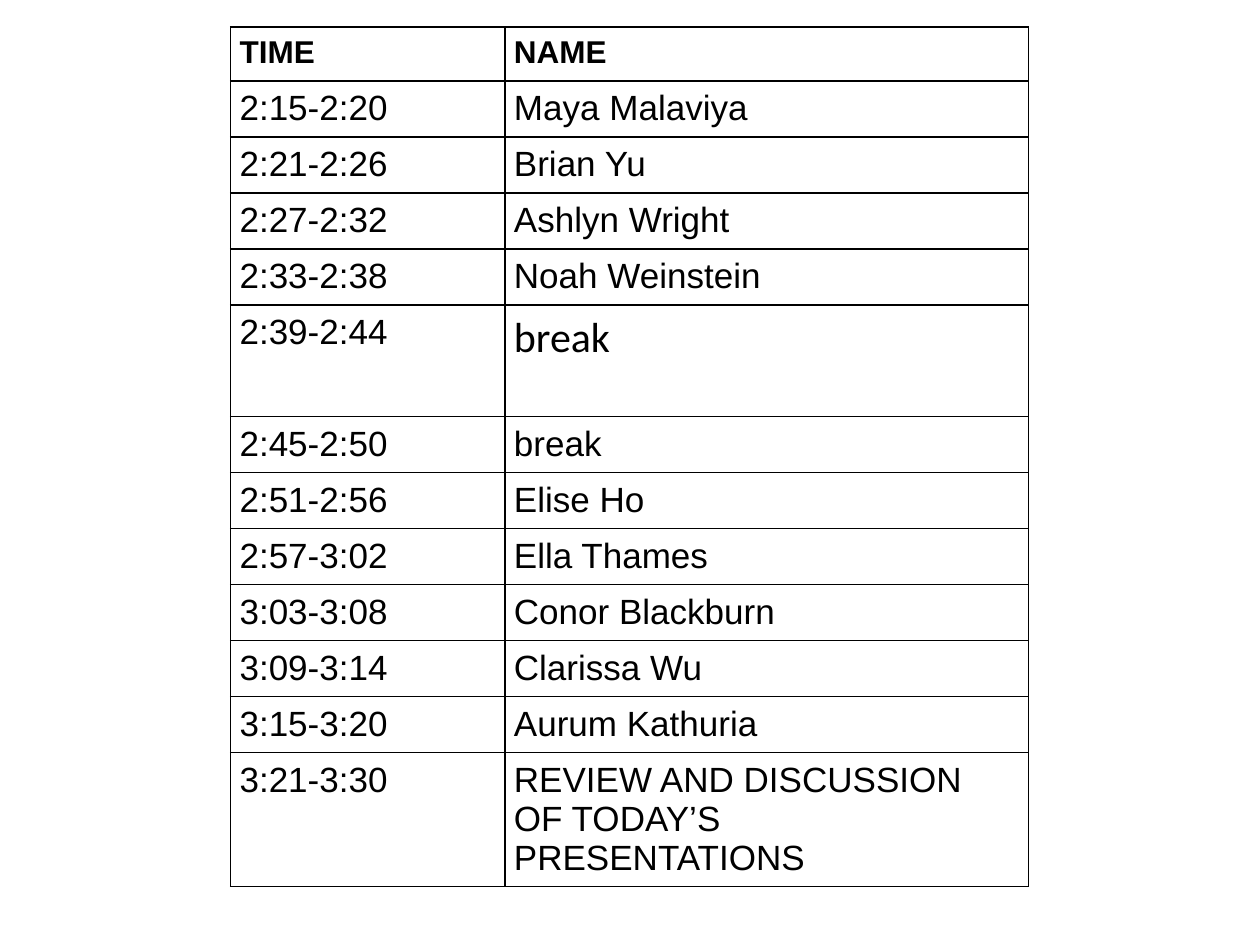
import pptx
import pptx.dml.color
import pptx.util
from lxml import etree
from pptx.oxml.ns import qn

Cm = pptx.util.Cm
Pt = pptx.util.Pt

SCHEDULE = [
    ("TIME", "NAME"),
    ("2:15-2:20", "Maya Malaviya"),
    ("2:21-2:26", "Brian Yu"),
    ("2:27-2:32", "Ashlyn Wright"),
    ("2:33-2:38", "Noah Weinstein"),
    ("2:39-2:44", "break"),
    ("2:45-2:50", "break"),
    ("2:51-2:56", "Elise Ho"),
    ("2:57-3:02", "Ella Thames"),
    ("3:03-3:08", "Conor Blackburn"),
    ("3:09-3:14", "Clarissa Wu"),
    ("3:15-3:20", "Aurum Kathuria"),
    ("3:21-3:30", "REVIEW AND DISCUSSION  OF TODAY’S PRESENTATIONS"),
]
BREAK_ROW = 5
SLOT_HEIGHT = 1.13
SPECIAL_HEIGHTS = {0: 1.09, BREAK_ROW: 2.25, len(SCHEDULE) - 1: 2.7}
COLUMN_WIDTHS = [5.53, 10.55]


def rgb(value):
    return pptx.dml.color.RGBColor.from_string(value)


def write(frame, text, size=20, font="Arial", color="000000", bold=False):
    run = frame.paragraphs[0].add_run()
    run.text = text
    run.font.size = Pt(size)
    run.font.name = font
    run.font.bold = bold
    run.font.color.rgb = rgb(color)


class Deck:
    ink = "000000"
    paper = "FFFFFF"
    border_width = Pt(1)

    def __init__(self):
        self.presentation = pptx.Presentation()
        self.presentation.slide_width = Cm(25.4)
        self.presentation.slide_height = Cm(19.05)
        self.slide = self.presentation.slides.add_slide(
            self.presentation.slide_layouts[6])

    def border(self, cell):
        properties = cell._tc.get_or_add_tcPr()
        for position, side in enumerate(("lnL", "lnR", "lnT", "lnB")):
            line = etree.Element(qn(f"a:{side}"), w=str(self.border_width))
            fill = etree.SubElement(line, qn("a:solidFill"))
            etree.SubElement(fill, qn("a:srgbClr"), val=self.ink)
            properties.insert(position, line)

    def cell(self, cell, text, **style):
        cell.margin_left = Cm(0.18)
        cell.margin_right = Cm(0.25)
        cell.margin_top = cell.margin_bottom = Cm(0.16)
        cell.fill.solid()
        cell.fill.fore_color.rgb = rgb(self.paper)
        self.border(cell)
        write(cell.text_frame, text, color=self.ink, **style)

    def table(self, left, top, widths, heights, rows, style_for):
        table = self.slide.shapes.add_table(
            len(rows), len(widths), Cm(left), Cm(top),
            Cm(sum(widths)), Cm(sum(heights))).table
        table.first_row = table.horz_banding = False
        for column, width in zip(table.columns, widths):
            column.width = Cm(width)
        for r, (height, texts) in enumerate(zip(heights, rows)):
            table.rows[r].height = Cm(height)
            for c, text in enumerate(texts):
                self.cell(table.cell(r, c), text, **style_for(r, c))


def schedule_style(row, column):
    if row == 0:
        return {"size": 18, "bold": True}
    if (row, column) == (BREAK_ROW, 1):
        return {"size": 24, "font": "Calibri"}
    return {}


def main():
    deck = Deck()
    heights = [SPECIAL_HEIGHTS.get(r, SLOT_HEIGHT) for r in range(len(SCHEDULE))]
    deck.table(4.65, 0.54, COLUMN_WIDTHS, heights, SCHEDULE, schedule_style)
    deck.presentation.save("out.pptx")


if __name__ == "__main__":
    main()
